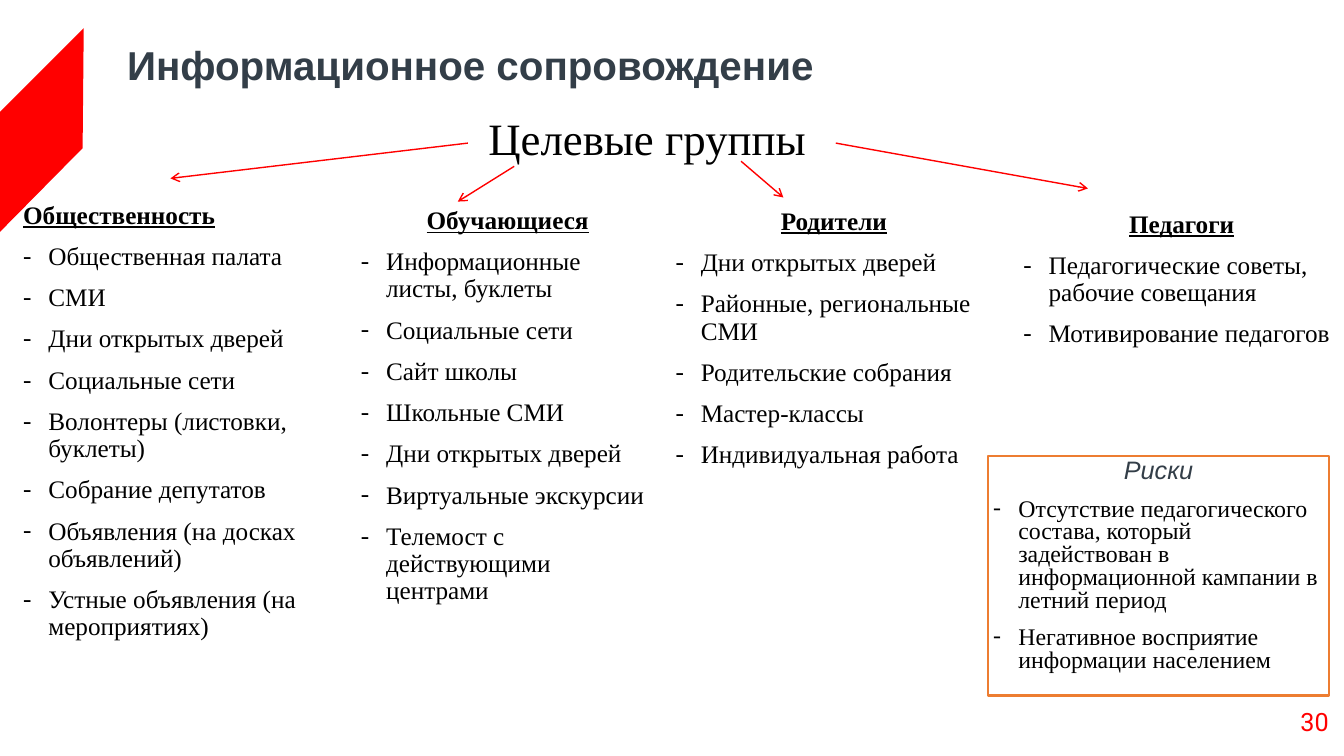
import pptx
import pptx.util
from pptx.dml.color import RGBColor
from pptx.enum.shapes import MSO_CONNECTOR, MSO_SHAPE
from pptx.enum.text import MSO_ANCHOR, MSO_AUTO_SIZE, PP_ALIGN
from pptx.oxml.ns import qn
from lxml import etree

# Content; places are percent of the slide's width and height
TITLE = "Информационное сопровождение"
HEADING = "Целевые группы"
PAGE = "30"
GROUPS = [
    ("Обучающиеся", (26.48, 26.8, 22.58, 60.4), [
        "Информационные листы, буклеты", "Социальные сети", "Сайт школы",
        "Школьные СМИ", "Дни открытых дверей", "Виртуальные экскурсии",
        "Телемост с действующими центрами"]),
    ("Родители", (49.89, 26.93, 24.31, 63.47), [
        "Дни открытых дверей", "Районные, региональные СМИ",
        "Родительские собрания", "Мастер-классы", "Индивидуальная работа"]),
    ("Педагоги", (75.77, 27.33, 24.31, 27.6), [
        "Педагогические советы, рабочие совещания",
        "Мотивирование педагогов"]),
    ("Общественность", (1.35, 26.13, 24.31, 63.47), [
        "Общественная палата", "СМИ", "Дни открытых дверей",
        "Социальные сети", "Волонтеры (листовки, буклеты)",
        "Собрание депутатов", "Объявления (на досках объявлений)",
        "Устные объявления (на мероприятиях)"]),
]
RISKS = ("Риски", (73.52, 60.27, 25.36, 31.73), [
    "Отсутствие педагогического состава, который задействован в "
    "информационной кампании в летний период",
    "Негативное восприятие информации населением"])
ARROWS = [
    ((34.81, 18.93), (12.68, 23.6)),
    ((38.26, 22), (34.06, 26.67)),
    ((55.14, 21.33), (58.29, 26.13)),
    ((62.19, 18.93), (80.95, 24.93)),
]
RIBBON = [(0, 30.67), (0, 14.8), (6.23, 3.73), (6.15, 19.6)]
COLORS = {"red": "FF0000", "slate": "333E48", "black": "000000", "orange": "ED7D31"}
SERIF = "Times New Roman"

deck = pptx.Presentation()
deck.slide_width = pptx.util.Inches(13.33)
deck.slide_height = pptx.util.Inches(7.5)
slide = deck.slides.add_slide(deck.slide_layouts[1])


def color(name):
    return RGBColor.from_string(COLORS[name])


def point(x, y):
    return round(deck.slide_width * x / 100), round(deck.slide_height * y / 100)


def area(x, y, width, height):
    return (*point(x, y), *point(width, height))


def place(holder, share):
    holder.left, holder.top, holder.width, holder.height = area(*share)


def frame_of(holder, anchor=MSO_ANCHOR.TOP, fit=MSO_AUTO_SIZE.NONE):
    frame = holder.text_frame
    frame.word_wrap, frame.auto_size, frame.vertical_anchor = True, fit, anchor
    for side in ("left", "right", "top", "bottom"):
        setattr(frame, f"margin_{side}", pptx.util.Inches(0.05))
    return frame


def write(frame, text, size=18, font=SERIF, ink="black", bold=False, italic=False,
          underline=False, align=PP_ALIGN.LEFT, spacing=1.0, before=0,
          bullet=None, hanging=False):
    first = not frame.paragraphs[0].runs
    paragraph = frame.paragraphs[0] if first else frame.add_paragraph()
    paragraph.alignment = align
    paragraph.line_spacing = spacing
    paragraph.space_before = pptx.util.Pt(0 if first else before)
    props = paragraph._p.get_or_add_pPr()
    indent = pptx.util.Inches(0.25) if hanging else 0
    props.set("marL", str(indent))
    props.set("indent", str(-indent))
    if bullet:
        etree.SubElement(props, qn("a:buFont")).set("typeface", font)
        etree.SubElement(props, qn("a:buChar")).set("char", bullet)
    else:
        etree.SubElement(props, qn("a:buNone"))
    run = paragraph.add_run()
    run.text = text
    run.font.size, run.font.name = pptx.util.Pt(size), font
    run.font.bold, run.font.italic, run.font.underline = bold, italic, underline
    run.font.color.rgb = color(ink)


def write_list(frame, items, **style):
    for item in items:
        write(frame, item, before=10, bullet="-", hanging=True, **style)


# Red ribbon at the left edge
outline = slide.shapes.build_freeform(*point(*RIBBON[0]), scale=1.0)
outline.add_line_segments([point(*corner) for corner in RIBBON[1:]], close=True)
ribbon = outline.convert_to_shape()
ribbon.shadow.inherit = False
ribbon.fill.solid()
ribbon.fill.fore_color.rgb = color("red")
ribbon.line.fill.background()

# Title
title = slide.shapes.title
place(title, (9.08, 5.33, 66.09, 13.33))
write(frame_of(title), TITLE, size=28.8, font="Arial", ink="slate", bold=True, spacing=0.9)

# Target groups: the first fills the body placeholder
for index, (name, share, items) in enumerate(GROUPS):
    if index == 0:
        group = slide.placeholders[1]
        place(group, share)
    else:
        group = slide.shapes.add_textbox(*area(*share))
    group_frame = frame_of(group)
    align = PP_ALIGN.LEFT if name == "Общественность" else PP_ALIGN.CENTER
    write(group_frame, name, bold=True, underline=True, align=align,
          spacing=0.9, hanging=True)
    write_list(group_frame, items, spacing=0.9)

# Risks
risk_name, risk_share, risk_items = RISKS
risks = slide.shapes.add_shape(MSO_SHAPE.RECTANGLE, *area(*risk_share))
risks.shadow.inherit = False
risks.fill.background()
risks.line.color.rgb = color("orange")
risks.line.width = pptx.util.Pt(1.5)
risk_frame = frame_of(risks)
write(risk_frame, risk_name, font="Arial", ink="slate", italic=True,
      align=PP_ALIGN.CENTER, spacing=0.8, hanging=True)
write_list(risk_frame, risk_items, size=17, spacing=0.8)

# Page number and heading
page = slide.shapes.add_textbox(*area(95.25, 92.8, 4, 5.2))
write(frame_of(page), PAGE, font="Roboto", ink="red", align=PP_ALIGN.RIGHT)
heading = slide.shapes.add_textbox(*area(19.73, 13.87, 56.86, 8.53))
write(frame_of(heading, MSO_ANCHOR.MIDDLE, MSO_AUTO_SIZE.SHAPE_TO_FIT_TEXT),
      HEADING, size=32, align=PP_ALIGN.CENTER)

# Arrows from the heading to the groups
for start, end in ARROWS:
    arrow = slide.shapes.add_connector(MSO_CONNECTOR.STRAIGHT, *point(*start), *point(*end))
    arrow.line.color.rgb = color("red")
    arrow.line.width = pptx.util.Pt(1)
    etree.SubElement(arrow.line._get_or_add_ln(), qn("a:tailEnd")).set("type", "arrow")
    etree.SubElement(arrow._element.spPr, qn("a:effectLst"))

deck.save("out.pptx")
